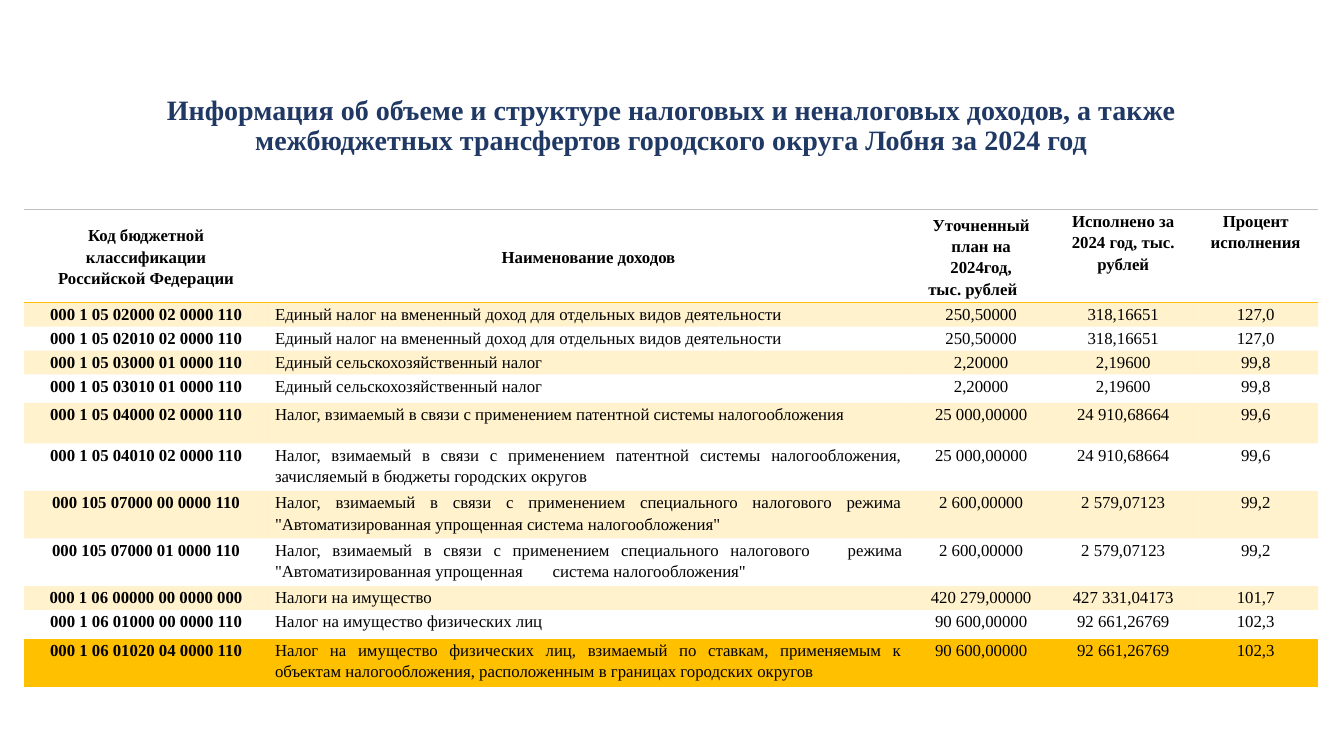
from lxml.etree import SubElement
from pptx import Presentation
from pptx.dml.color import RGBColor
from pptx.enum.text import MSO_ANCHOR as ANCHOR, PP_ALIGN as ALIGN
from pptx.oxml.ns import qn
from pptx.util import Pt

TITLE = ("Информация об объеме и структуре налоговых и неналоговых доходов, а также "
         "межбюджетных трансфертов городского округа Лобня за 2024 год")
HEADERS = [
    ["Код бюджетной классификации", "Российской Федерации"],
    ["Наименование доходов"],
    ["Уточненный план на", "2024год,", "тыс. рублей"],
    ["Исполнено за 2024 год, тыс. рублей"],
    ["Процент исполнения"],
]
GAP = "|"  # a wide gap inside a line
# row height, code, name, plan, actual, percent
INCOME = [
    (17.1, "000 1 05 02000 02 0000 110",
     "Единый налог на вмененный доход для отдельных видов деятельности",
     "250,50000", "318,16651", "127,0"),
    (17.1, "000 1 05 02010 02 0000 110",
     "Единый налог на вмененный доход для отдельных видов деятельности",
     "250,50000", "318,16651", "127,0"),
    (17.1, "000 1 05 03000 01 0000 110", "Единый сельскохозяйственный налог",
     "2,20000", "2,19600", "99,8"),
    (20.3, "000 1 05 03010 01 0000 110", "Единый сельскохозяйственный налог",
     "2,20000", "2,19600", "99,8"),
    (28.9, "000 1 05 04000 02 0000 110",
     "Налог, взимаемый в связи с применением патентной системы налогообложения",
     "25 000,00000", "24 910,68664", "99,6"),
    (34, "000 1 05 04010 02 0000 110",
     "Налог, взимаемый в связи с применением патентной системы налогообложения, "
     "зачисляемый в бюджеты городских округов",
     "25 000,00000", "24 910,68664", "99,6"),
    (34, "000 105 07000 00 0000 110",
     "Налог, взимаемый в связи с применением специального налогового режима "
     "\"Автоматизированная упрощенная система налогообложения\"",
     "2 600,00000", "2 579,07123", "99,2"),
    (34, "000 105 07000 01 0000 110",
     "Налог, взимаемый в связи с применением специального налогового|режима "
     "\"Автоматизированная упрощенная|система налогообложения\"",
     "2 600,00000", "2 579,07123", "99,2"),
    (17.1, "000 1 06 00000 00 0000 000", "Налоги на имущество",
     "420 279,00000", "427 331,04173", "101,7"),
    (20.5, "000 1 06 01000 00 0000 110", "Налог на имущество физических лиц",
     "90 600,00000", "92 661,26769", "102,3"),
    (34, "000 1 06 01020 04 0000 110",
     "Налог на имущество физических лиц, взимаемый по ставкам, применяемым к "
     "объектам налогообложения, расположенным в границах городских округов",
     "90 600,00000", "92 661,26769", "102,3"),
]
HEADER_HEIGHT = 66.4
COLUMN_WIDTHS = [174.2, 457.9, 103, 100, 89.3]


def rgb(value):
    return RGBColor.from_string(value)


def apply(target, values):
    for name, value in values.items():
        setattr(target, name, value)


class Deck:
    font = "Times New Roman"
    navy, black, gold, grey = "203864", "000000", "FFC000", "BFBFBF"
    no_grid = "{2D5ABB26-0587-4C30-8999-92F81FD0307C}"

    def __init__(self):
        self.prs = Presentation()
        apply(self.prs, {"slide_width": Pt(960), "slide_height": Pt(540)})
        self.s = self.prs.slides.add_slide(self.prs.slide_layouts[5])

    def run(self, p, text, size, color, bold):
        r = p.add_run()
        r.text = text
        apply(r.font, {"name": self.font, "size": Pt(size), "bold": bold})
        r.font.color.rgb = rgb(color)
        return r

    def title(self, text, left, top, width, height):
        sp = self.s.shapes.title
        apply(sp, {"left": Pt(left), "top": Pt(top), "width": Pt(width), "height": Pt(height)})
        tf = sp.text_frame
        apply(tf, {"word_wrap": True, "vertical_anchor": ANCHOR.MIDDLE})
        p = tf.paragraphs[0]
        apply(p, {"alignment": ALIGN.CENTER, "line_spacing": 0.9})
        self.run(p, text, 20, self.navy, True)

    def border(self, cell, side, color):
        ln = SubElement(cell._tc.get_or_add_tcPr(), qn("a:ln" + side), w=str(Pt(1)))
        SubElement(SubElement(ln, qn("a:solidFill")), qn("a:srgbClr"), val=color)

    def shade(self, cell, shaded):
        """Fill the cell with gold at 20 % opacity, or leave it clear."""
        if not shaded:
            cell.fill.background()
            return
        cell.fill.solid()
        cell.fill.fore_color.rgb = rgb(self.gold)
        color = cell._tc.tcPr.find(".//" + qn("a:srgbClr"))
        SubElement(color, qn("a:alpha"), val="20000")

    def cell(self, cell, lines, bold, align, anchor, inset):
        apply(cell, {"margin_left": Pt(inset), "margin_right": Pt(inset),
                     "margin_top": 0, "margin_bottom": 0, "vertical_anchor": anchor})
        tf = cell.text_frame
        for i, line in enumerate(lines):
            p = tf.add_paragraph() if i else tf.paragraphs[0]
            apply(p, {"alignment": align, "line_spacing": 1.15})
            for j, part in enumerate(line.split(GAP)):
                if j:
                    gap = self.run(p, " ", 12, self.black, bold)
                    gap.font._element.set("spc", "1800")
                self.run(p, part, 12, self.black, bold)
        return tf

    def table(self, left, top):
        heights = [HEADER_HEIGHT] + [row[0] for row in INCOME]
        frame = self.s.shapes.add_table(len(heights), len(COLUMN_WIDTHS), Pt(left), Pt(top),
                                        Pt(sum(COLUMN_WIDTHS)), Pt(sum(heights)))
        table = frame.table
        table._tbl.tblPr.find(qn("a:tableStyleId")).text = self.no_grid
        for column, width in zip(table.columns, COLUMN_WIDTHS):
            column.width = Pt(width)
        for row, height in zip(table.rows, heights):
            row.height = Pt(height)

        for c, lines in enumerate(HEADERS):
            cell = table.cell(0, c)
            anchor = ANCHOR.MIDDLE if c < 3 else ANCHOR.TOP
            tf = self.cell(cell, lines, True, ALIGN.CENTER, anchor, 2.9)
            if c == 2:
                tf.paragraphs[-1]._p.get_or_add_pPr().set("marR", str(Pt(12)))
            self.border(cell, "T", self.grey)
            self.border(cell, "B", self.gold)
            self.shade(cell, False)

        for r, (_, *values) in enumerate(INCOME, 1):
            for c, text in enumerate(values):
                cell = table.cell(r, c)
                align = ALIGN.JUSTIFY if c == 1 else ALIGN.CENTER
                self.cell(cell, [text], c == 0, align, ANCHOR.TOP, 5)
                if r == len(INCOME):
                    self.border(cell, "B", self.gold)
                self.shade(cell, r % 2 == 1)


def main():
    deck = Deck()
    deck.title(TITLE, 98.6, 59, 761.8, 62.6)
    deck.table(17.3, 149.8)
    deck.prs.save("out.pptx")


if __name__ == "__main__":
    main()
